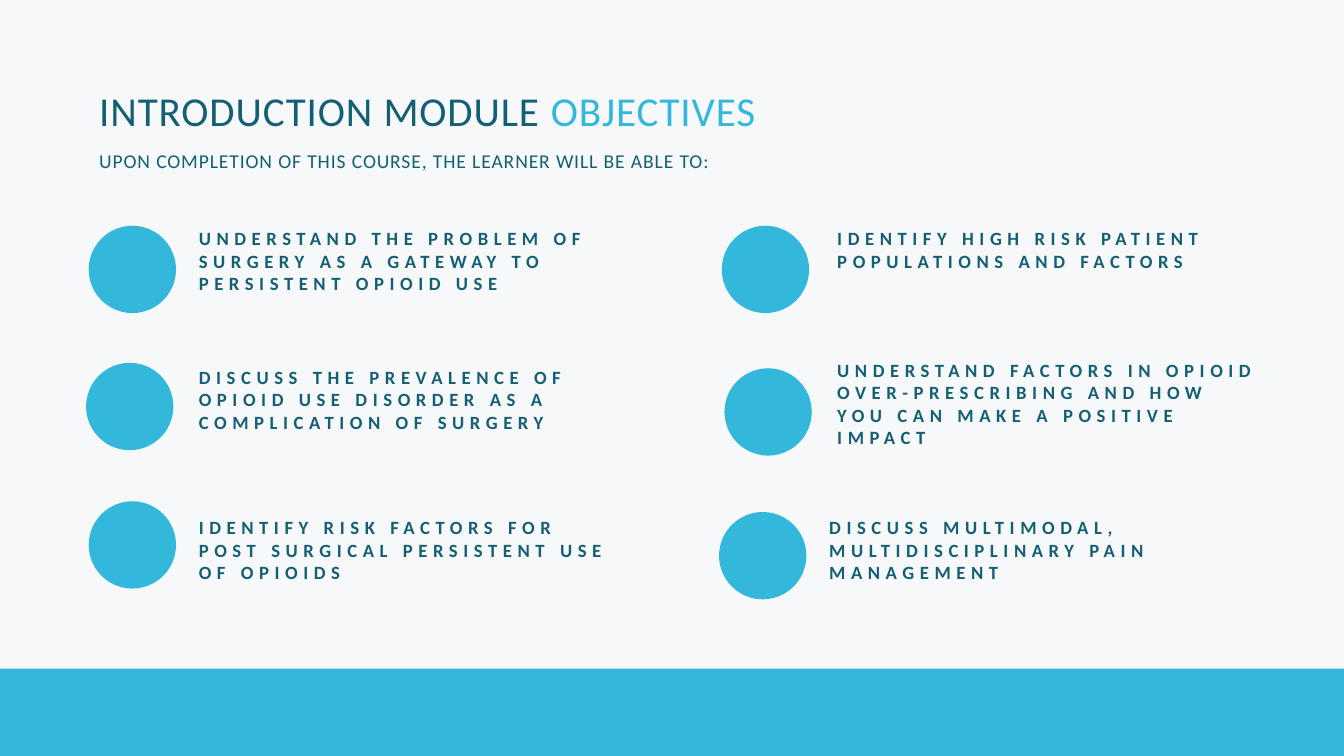
"""Build the introduction module objectives slide."""
import pptx
import pptx.dml.color
import pptx.enum.shapes
import pptx.enum.text
import pptx.util

Inches = pptx.util.Inches
RGBColor = pptx.dml.color.RGBColor
MSO_SHAPE = pptx.enum.shapes.MSO_SHAPE

BACKGROUND = RGBColor(0xF6, 0xF8, 0xFA)
SKY = RGBColor(0x33, 0xB8, 0xDC)
TEAL = RGBColor(0x14, 0x5F, 0x74)

SLIDE_WIDTH = 10
SLIDE_HEIGHT = SLIDE_WIDTH * 9 / 16
BAND_HEIGHT = 0.65
DOT_SIZE = 0.65
OBJECTIVE_WIDTH = 3.16
LINE_HEIGHT = 0.17

OBJECTIVES = [
    (0.66, 1.68, 1.48, 1.69, 3,
     "UNDERSTAND THE PROBLEM OF SURGERY AS A GATEWAY TO PERSISTENT OPIOID USE"),
    (0.64, 2.70, 1.48, 2.72, 3,
     "DISCUSS THE PREVALENCE OF OPIOID USE DISORDER AS A COMPLICATION OF SURGERY"),
    (0.66, 3.73, 1.48, 3.84, 3,
     "IDENTIFY RISK FACTORS FOR POST SURGICAL PERSISTENT USE OF OPIOIDS"),
    (5.37, 1.68, 6.23, 1.69, 2,
     "IDENTIFY HIGH RISK PATIENT POPULATIONS AND FACTORS"),
    (5.39, 2.74, 6.23, 2.67, 4,
     "UNDERSTAND FACTORS IN OPIOID OVER-PRESCRIBING AND HOW YOU CAN MAKE A POSITIVE IMPACT"),
    (5.35, 3.81, 6.17, 3.84, 3,
     "DISCUSS MULTIMODAL, MULTIDISCIPLINARY PAIN MANAGEMENT"),
]


def add_shape(kind, left, top, width, height):
    s = slide.shapes.add_shape(
        kind, Inches(left), Inches(top), Inches(width), Inches(height))
    s.shadow.inherit = False
    s.fill.solid()
    s.fill.fore_color.rgb = SKY
    s.line.fill.background()


def add_text(left, top, width, height, parts, size, spacing, bold=False):
    tf = slide.shapes.add_textbox(
        Inches(left), Inches(top), Inches(width), Inches(height)).text_frame
    tf.word_wrap = True
    for text, color in parts:
        r = tf.paragraphs[0].add_run()
        r.text = text
        r.font.name = "Calibri"
        r.font.size = pptx.util.Pt(size)
        r.font.bold = bold
        r.font.color.rgb = color
        r.font._element.set("spc", str(int(spacing * 100)))
    return tf


prs = pptx.Presentation()
prs.slide_width = Inches(SLIDE_WIDTH)
prs.slide_height = Inches(SLIDE_HEIGHT)
slide = prs.slides.add_slide(prs.slide_layouts[6])
slide.background.fill.solid()
slide.background.fill.fore_color.rgb = BACKGROUND

add_shape(MSO_SHAPE.RECTANGLE, 0, SLIDE_HEIGHT - BAND_HEIGHT, SLIDE_WIDTH, BAND_HEIGHT)

title = add_text(0.64, 0.63, 8.7, 0.42,
                 [("INTRODUCTION MODULE ", TEAL), ("OBJECTIVES", SKY)], 22, 0.5)
title.paragraphs[0].line_spacing = 0.9

subtitle = add_text(
    0.64, 1.06, 7.5, 0.28,
    [("UPON COMPLETION OF THIS COURSE, THE LEARNER WILL BE ABLE TO:", TEAL)], 10.5, 0.5)
subtitle.auto_size = pptx.enum.text.MSO_AUTO_SIZE.SHAPE_TO_FIT_TEXT

for dot_left, dot_top, left, top, lines, text in OBJECTIVES:
    add_shape(MSO_SHAPE.OVAL, dot_left, dot_top, DOT_SIZE, DOT_SIZE)
    tf = add_text(left, top, OBJECTIVE_WIDTH, lines * LINE_HEIGHT,
                  [(text, TEAL)], 10, 3, bold=True)
    tf.margin_left = tf.margin_right = tf.margin_top = tf.margin_bottom = 0
    tf.auto_size = pptx.enum.text.MSO_AUTO_SIZE.SHAPE_TO_FIT_TEXT

prs.save("out.pptx")
